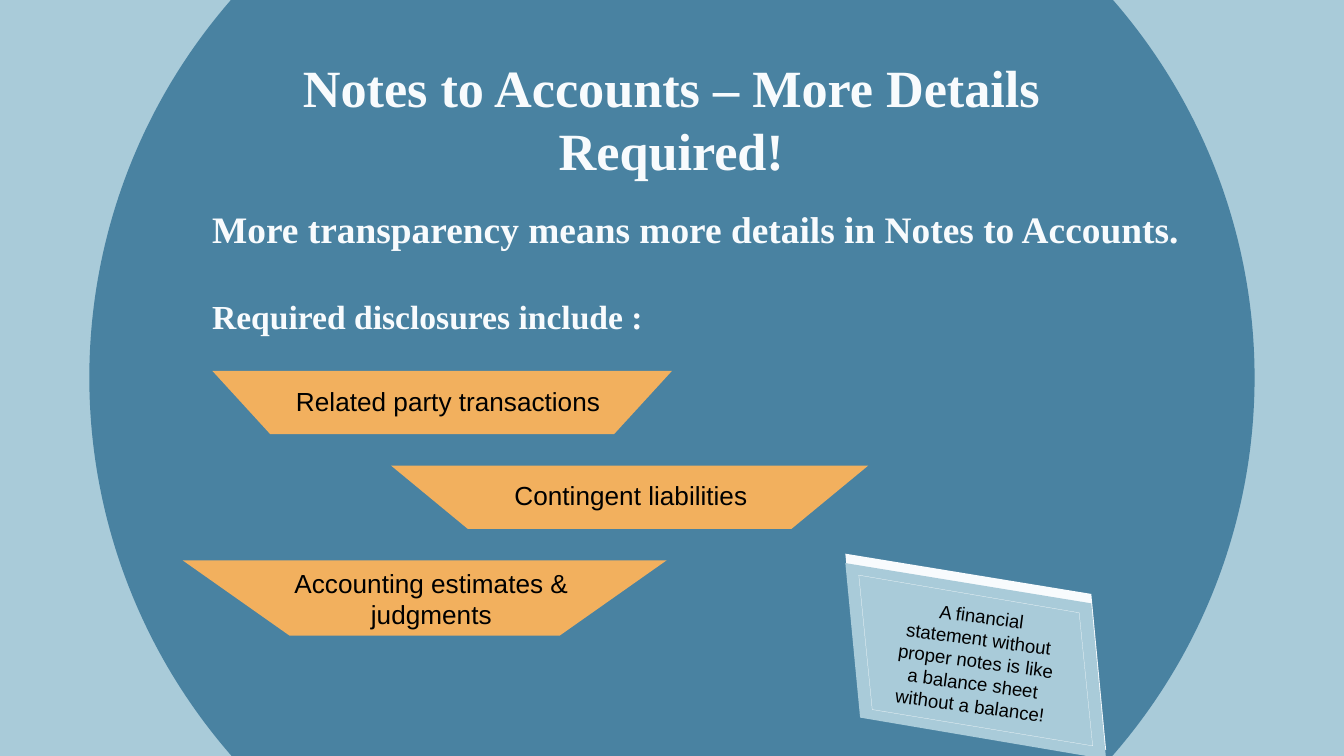
"""Build the Notes to Accounts slide on a grid of 0.1 inch cells."""
from dataclasses import dataclass

from pptx import Presentation
from pptx.dml.color import RGBColor as RGB
from pptx.enum.shapes import MSO_SHAPE as Shape
from pptx.enum.text import MSO_ANCHOR as Anchor, PP_ALIGN as Align
from pptx.util import Inches, Pt


@dataclass(frozen=True)
class Theme:
    back: str = "A9CBD9"
    disc: str = "4982A1"
    band: str = "F2B05E"
    pale: str = "F8FBFD"
    rim: str = "FFFFFF"
    ink: str = "000000"
    serif: str = "Times New Roman"
    sans: str = "Arial"
    title: int = 28
    lead: int = 20
    sub: int = 18
    label: int = 14
    note: int = 10


def cell(count):
    return Inches(count / 10)


class Page:
    def __init__(self, deck, theme):
        self.theme = theme
        self.slide = deck.slides.add_slide(deck.slide_layouts[6])
        self.shapes = self.slide.shapes
        fill = self.slide.background.fill
        fill.solid()
        fill.fore_color.rgb = RGB.from_string(theme.back)

    def paint(self, shape, fill=None, line=None):
        shape.shadow.inherit = False
        if fill:
            shape.fill.solid()
            shape.fill.fore_color.rgb = RGB.from_string(fill)
        else:
            shape.fill.background()
        if line:
            shape.line.color.rgb = RGB.from_string(line)
            shape.line.width = Pt(0.12)
        else:
            shape.line.fill.background()

    def disc(self, box, fill):
        self.paint(self.shapes.add_shape(Shape.OVAL, *map(cell, box)), fill)

    def poly(self, points, fill=None, line=None):
        first, *rest = [(cell(x), cell(y)) for x, y in points]
        path = self.shapes.build_freeform(*first)
        path.add_line_segments(rest, close=True)
        self.paint(path.convert_to_shape(), fill, line)

    def band(self, left, top, wide, high, cut):
        right, base = left + wide, top + high
        self.poly([(left, top), (left + cut, base), (right - cut, base), (right, top)],
                  self.theme.band)

    def text(self, box, lines, face, tint, bold=False, align=Align.CENTER,
             pad=0.5, gap=0, anchor=Anchor.TOP, turn=0):
        shape = self.shapes.add_textbox(*map(cell, box))
        shape.rotation = turn
        frame = shape.text_frame
        frame.word_wrap = True
        frame.vertical_anchor = anchor
        frame.margin_top = frame.margin_bottom = cell(pad)
        for i, (words, size) in enumerate(lines):
            para = frame.add_paragraph() if i else frame.paragraphs[0]
            para.text = words
            para.alignment = align
            para.space_before = Pt(gap if i else 0)
            font = para.font
            font.name, font.size, font.bold = face, Pt(size), bold
            font.color.rgb = RGB.from_string(tint)

    def label(self, box, words, size, turn=0):
        self.text(box, [(words, size)], self.theme.sans, self.theme.ink, turn=turn)


def main():
    deck = Presentation()
    deck.slide_width, deck.slide_height = Inches(10), Inches(10 * 9 / 16)
    look = Theme()
    page = Page(deck, look)
    page.disc((6.65, -14.9, 86.7, 86), look.disc)

    page.text((13.6, 3.1, 72.7, 6.3),
              [("Notes to Accounts – More Details Required!", look.title)],
              look.serif, look.pale, bold=True, pad=1)
    page.text((14.8, 17.3, 82.3, 5.8),
              [("More transparency means more details in Notes to Accounts.", look.lead),
               ("Required disclosures include :", look.sub)],
              look.serif, look.pale, bold=True, align=Align.LEFT,
              pad=1, gap=24, anchor=Anchor.MIDDLE)

    bands = [
        ((15.8, 27.6, 34.2, 4.7, 4.3), (18.8, 28.2, 29.1, 3.4), "Related party transactions"),
        ((29.1, 34.65, 35.5, 4.7, 5.7), (32.4, 35.2, 29.1, 3.4), "Contingent liabilities"),
        ((13.6, 41.7, 36, 5.6, 7.95), (16.6, 41.7, 31, 5.7), "Accounting estimates & judgments"),
    ]
    for form, box, words in bands:
        page.band(*form)
        page.label(box, words, look.label)

    sheet = [(82.3, 55.8), (81.2, 44.2), (62.9, 41.2), (64, 52.7)]
    page.poly(sheet, look.pale)
    page.poly([(x, y + 0.7) for x, y in sheet], look.back)
    page.poly([(63.9, 42.8), (80.3, 45.6), (81.3, 55.5), (64.9, 52.8)], line=look.rim)
    page.label((65.5, 44.5, 14.2, 9.4),
               "A financial statement without proper notes is like "
               "a balance sheet without a balance!", look.note, turn=7.6)
    deck.save("out.pptx")


if __name__ == "__main__":
    main()
